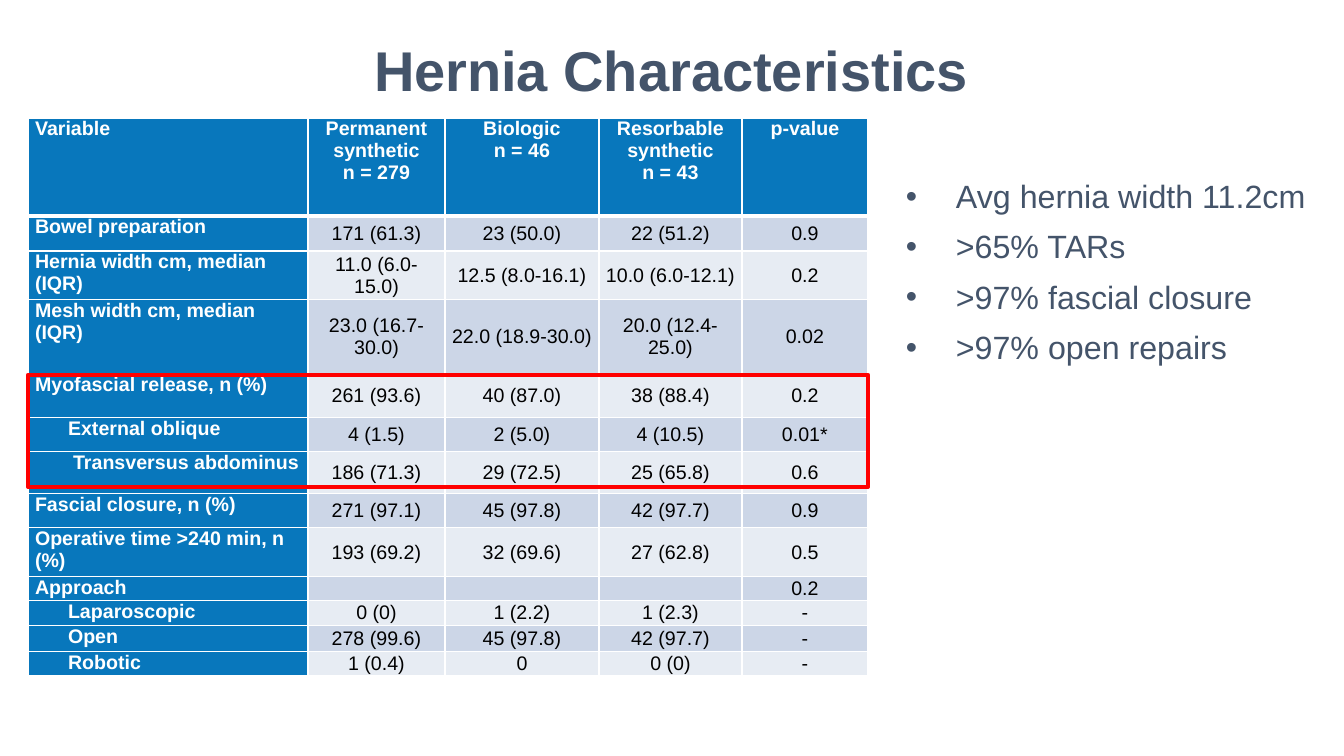
from lxml.etree import SubElement
from pptx import Presentation
from pptx.dml.color import RGBColor
from pptx.enum.shapes import MSO_SHAPE
from pptx.enum.text import MSO_ANCHOR, PP_ALIGN
from pptx.oxml.ns import qn
from pptx.util import Emu, Pt

PX = 914400 / 100.8
FONT = "Arial"
SLATE, BLUE, RED, WHITE, BLACK = "44546A", "0877BC", "FF0000", "FFFFFF", "000000"
BANDS = ("CCD6E7", "E7ECF3")
TABLE_LEFT, TABLE_TOP = 28, 118
COLUMN_WIDTHS = (280, 137, 154, 143, 126)
ROW_HEIGHTS = (98, 35, 49, 74, 44, 34, 42, 34, 49, 24, 25, 26, 24)
LABEL_INDENTS = {
    "External oblique": 33,
    "Transversus abdominus": 38,
    "Laparoscopic": 33,
    "Open": 33,
    "Robotic": 33,
}
ROWS = (
    ("Variable", "Permanent synthetic\nn = 279", "Biologic\nn = 46",
     "Resorbable synthetic\nn = 43", "p-value"),
    ("Bowel preparation", "171 (61.3)", "23 (50.0)", "22 (51.2)", "0.9"),
    ("Hernia width cm, median (IQR)", "11.0 (6.0-15.0)", "12.5 (8.0-16.1)",
     "10.0 (6.0-12.1)", "0.2"),
    ("Mesh width cm, median (IQR)", "23.0 (16.7-30.0)", "22.0 (18.9-30.0)",
     "20.0 (12.4-25.0)", "0.02"),
    ("Myofascial release, n (%)", "261 (93.6)", "40 (87.0)", "38 (88.4)", "0.2"),
    ("External oblique", "4 (1.5)", "2 (5.0)", "4 (10.5)", "0.01*"),
    ("Transversus abdominus", "186 (71.3)", "29 (72.5)", "25 (65.8)", "0.6"),
    ("Fascial closure, n (%)", "271 (97.1)", "45 (97.8)", "42 (97.7)", "0.9"),
    ("Operative time >240 min, n (%)", "193 (69.2)", "32 (69.6)", "27 (62.8)", "0.5"),
    ("Approach", "", "", "", "0.2"),
    ("Laparoscopic", "0 (0)", "1 (2.2)", "1 (2.3)", "-"),
    ("Open", "278 (99.6)", "45 (97.8)", "42 (97.7)", "-"),
    ("Robotic", "1 (0.4)", "0", "0 (0)", "-"),
)
FINDINGS = ("Avg hernia width 11.2cm", ">65% TARs", ">97% fascial closure",
            ">97% open repairs")


def px(length):
    return Emu(round(length * PX))


def color(value):
    return RGBColor.from_string(value)


def format_runs(paragraph, size, text_color, bold=False):
    for run in paragraph.runs:
        run.font.name = FONT
        run.font.size = Pt(size)
        run.font.bold = bold
        run.font.color.rgb = color(text_color)


def add_text_box(slide, left, top, width, height):
    frame = slide.shapes.add_textbox(px(left), px(top), px(width), px(height)).text_frame
    frame.word_wrap = True
    return frame


def add_title(slide, text):
    frame = add_text_box(slide, -1, 0, 1344, 146)
    frame.vertical_anchor = MSO_ANCHOR.MIDDLE
    frame.text = text
    paragraph = frame.paragraphs[0]
    paragraph.alignment = PP_ALIGN.CENTER
    paragraph.line_spacing = 0.9
    format_runs(paragraph, 40, SLATE, bold=True)


def add_bullets(slide, items):
    frame = add_text_box(slide, 896, 176, 572, 480)
    frame.text = "\n".join(items)
    for index, paragraph in enumerate(frame.paragraphs):
        properties = paragraph._p.get_or_add_pPr()
        properties.set("marL", str(px(50)))
        properties.set("indent", str(px(-50)))
        SubElement(properties, qn("a:buFont"), typeface=FONT)
        SubElement(properties, qn("a:buChar"), char="•")
        paragraph.line_spacing = 0.9
        if index:
            paragraph.space_before = Pt(11)
        format_runs(paragraph, 23, SLATE)


def set_borders(cell, row):
    widths = {"L": 1, "R": 1, "T": 3 if row == 1 else 1, "B": 3 if row == 0 else 1}
    for side, width in widths.items():
        line = SubElement(cell._tc.get_or_add_tcPr(), qn(f"a:ln{side}"), w=str(Pt(width)))
        fill = SubElement(line, qn("a:solidFill"))
        SubElement(fill, qn("a:srgbClr"), val=WHITE)


def fill_cell(cell, row, column, text):
    is_heading = row == 0 or column == 0
    set_borders(cell, row)
    cell.fill.solid()
    cell.fill.fore_color.rgb = color(BLUE if is_heading else BANDS[(row - 1) % 2])
    cell.margin_left = cell.margin_right = px(7)
    cell.margin_top = cell.margin_bottom = 0
    cell.vertical_anchor = MSO_ANCHOR.TOP if is_heading else MSO_ANCHOR.MIDDLE
    cell.text_frame.text = text
    for paragraph in cell.text_frame.paragraphs:
        paragraph.alignment = PP_ALIGN.CENTER if column else PP_ALIGN.LEFT
        if text in LABEL_INDENTS:
            paragraph._p.get_or_add_pPr().set("marL", str(px(LABEL_INDENTS[text])))
        format_runs(paragraph, 14, WHITE if is_heading else BLACK, is_heading)
        if not text:
            SubElement(paragraph._p, qn("a:endParaRPr"), sz="1400")


def add_hernia_table(slide):
    table = slide.shapes.add_table(
        len(ROWS), len(COLUMN_WIDTHS), px(TABLE_LEFT), px(TABLE_TOP),
        px(sum(COLUMN_WIDTHS)), px(sum(ROW_HEIGHTS))).table
    table.first_row = table.horz_banding = False
    for column, width in zip(table.columns, COLUMN_WIDTHS):
        column.width = px(width)
    for row, height in zip(table.rows, ROW_HEIGHTS):
        row.height = px(height)
    for row, texts in enumerate(ROWS):
        for column, text in enumerate(texts):
            fill_cell(table.cell(row, column), row, column, text)


def add_highlight(slide):
    shape = slide.shapes.add_shape(
        MSO_SHAPE.RECTANGLE, px(TABLE_LEFT), px(375), px(sum(COLUMN_WIDTHS)), px(112))
    shape.shadow.inherit = False
    shape.fill.background()
    shape.line.color.rgb = color(RED)
    shape.line.width = Pt(3)


def main():
    presentation = Presentation()
    presentation.slide_width, presentation.slide_height = px(1344), px(756)
    slide = presentation.slides.add_slide(presentation.slide_layouts[6])
    add_title(slide, "Hernia Characteristics")
    add_hernia_table(slide)
    add_bullets(slide, FINDINGS)
    add_highlight(slide)
    presentation.save("out.pptx")


if __name__ == "__main__":
    main()
